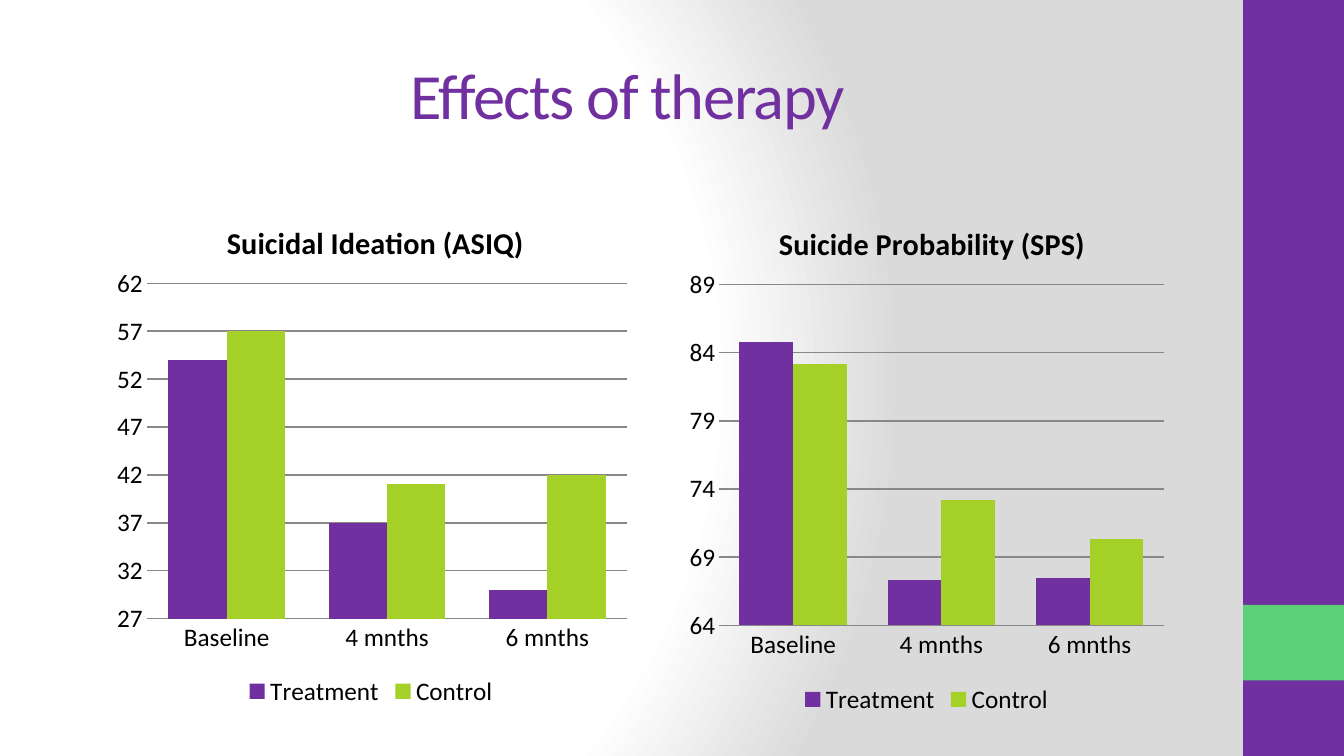
import pptx
import pptx.chart.data
import pptx.dml.color
import pptx.enum.chart
import pptx.enum.shapes
import pptx.enum.text
import pptx.oxml
import pptx.oxml.ns
import pptx.util
from pptx.util import Inches, Pt

RGBColor = pptx.dml.color.RGBColor
PURPLE = RGBColor(0x70, 0x30, 0xA0)
GREEN = RGBColor(0x5B, 0xD0, 0x78)
LIME = RGBColor(0xA5, 0xD0, 0x28)
GRAY = RGBColor(0x88, 0x88, 0x88)
BLACK = RGBColor(0, 0, 0)
FONT = "Calibri"

BACKGROUND = """<a:gradFill %s rotWithShape="1"><a:gsLst>
<a:gs pos="0"><a:srgbClr val="FFFFFF"/></a:gs>
<a:gs pos="75000"><a:srgbClr val="FFFFFF"/></a:gs>
<a:gs pos="100000"><a:srgbClr val="DADADA"/></a:gs></a:gsLst>
<a:path path="circle"><a:fillToRect l="20000" t="50000" r="100000" b="50000"/></a:path>
</a:gradFill>""" % pptx.oxml.ns.nsdecls("a")


def set_background(slide):
    slide.background.fill.gradient()
    old = slide.background._cSld.find(".//" + pptx.oxml.ns.qn("a:gradFill"))
    old.getparent().replace(old, pptx.oxml.parse_xml(BACKGROUND))


def set_font(font, size, color, bold=False):
    font.name, font.size, font.bold = FONT, Pt(size), bold
    font.color.rgb = color


def set_line(line):
    line.color.rgb = GRAY
    line.width = Pt(1)


def add_bar(slide, top, height, color):
    sp = slide.shapes.add_shape(pptx.enum.shapes.MSO_SHAPE.RECTANGLE,
                                Inches(12.33), Inches(top), Inches(1), Inches(height))
    sp.shadow.inherit = False
    sp.fill.solid()
    sp.fill.fore_color.rgb = color
    sp.line.fill.background()


def add_title(slide, text):
    sp = slide.shapes.add_textbox(Inches(0.67), Inches(0.3), Inches(11.11), Inches(1.25))
    tf = sp.text_frame
    tf.word_wrap = True
    tf.vertical_anchor = pptx.enum.text.MSO_ANCHOR.MIDDLE
    tf.text = text
    p = tf.paragraphs[0]
    p.alignment = pptx.enum.text.PP_ALIGN.CENTER
    r = p.runs[0]
    set_font(r.font, 46, PURPLE)
    r.font._element.set("spc", "-100")


def place(element, **fractions):
    """Fix a chart part at fractions of the chart's size."""
    old = element.find(pptx.oxml.ns.qn("c:layout"))
    if old is not None:
        element.remove(old)
    target = '<c:layoutTarget val="inner"/>' if "w" in fractions else ""
    modes = "".join(f'<c:{k}Mode val="edge"/>' for k in "xy")
    values = "".join(f'<c:{k} val="{v}"/>' for k, v in fractions.items())
    layout = pptx.oxml.parse_xml(
        f'<c:layout {pptx.oxml.ns.nsdecls("c")}><c:manualLayout>'
        f'{target}{modes}{values}</c:manualLayout></c:layout>')
    # The layout follows the title's text, and comes first in the plot area
    text = element.find(pptx.oxml.ns.qn("c:tx"))
    element.insert(0 if text is None else 1, layout)


def add_chart(slide, box, title, title_x, plot, scale, treatment, control):
    data = pptx.chart.data.CategoryChartData()
    data.categories = ["Baseline", "4 mnths", "6 mnths"]
    data.add_series("Treatment", treatment)
    data.add_series("Control", control)
    chart = slide.shapes.add_chart(pptx.enum.chart.XL_CHART_TYPE.COLUMN_CLUSTERED,
                                   *map(Inches, box), data).chart
    set_font(chart.font, 18, BLACK)

    # Title
    chart.has_title = True
    tf = chart.chart_title.text_frame
    tf.text = title
    set_font(tf.paragraphs[0].runs[0].font, 21.6, BLACK, bold=True)
    chart.chart_title.include_in_layout = False
    place(chart.chart_title._element, x=title_x, y=0.04)

    # Columns
    columns = chart.plots[0]
    columns.gap_width, columns.overlap = 75, 0
    columns.vary_by_categories = False
    for series, color in zip(columns.series, (PURPLE, LIME)):
        series.format.fill.solid()
        series.format.fill.fore_color.rgb = color
    place(chart._chartSpace.chart.plotArea, **plot)

    # Axes
    for axis in (chart.category_axis, chart.value_axis):
        axis.major_tick_mark = axis.minor_tick_mark = pptx.enum.chart.XL_TICK_MARK.NONE
        set_font(axis.tick_labels.font, 18, BLACK)
    set_line(chart.category_axis.format.line)
    values = chart.value_axis
    values.minimum_scale, values.maximum_scale = scale
    values.major_unit = 5
    values.format.line.fill.background()
    set_line(values.major_gridlines.format.line)

    # Legend
    chart.has_legend = True
    chart.legend.position = pptx.enum.chart.XL_LEGEND_POSITION.BOTTOM
    chart.legend.include_in_layout = False
    set_font(chart.legend.font, 18, BLACK)


def main():
    prs = pptx.Presentation()
    prs.slide_width, prs.slide_height = Inches(13.33), Inches(7.5)
    slide = prs.slides.add_slide(prs.slide_layouts[6])
    set_background(slide)

    # Side band
    add_bar(slide, 0, 7.5, PURPLE)
    add_bar(slide, 6, 0.75, GREEN)

    add_title(slide, "Effects of therapy")

    # Outcome charts
    add_chart(slide, (1.03, 1.94, 5.3, 5.12), "Suicidal Ideation (ASIQ)", 0.22,
              dict(x=0.08, y=0.17, w=0.9, h=0.65), (27, 62),
              (54, 37, 30), (57, 41, 42))
    add_chart(slide, (6.74, 1.94, 4.9, 5.2), "Suicide Probability (SPS)", 0.19,
              dict(x=0.08, y=0.17, w=0.9, h=0.65), (64, 89),
              (84.8, 67.3, 67.5), (83.2, 73.2, 70.3))

    prs.save("out.pptx")


if __name__ == "__main__":
    main()
